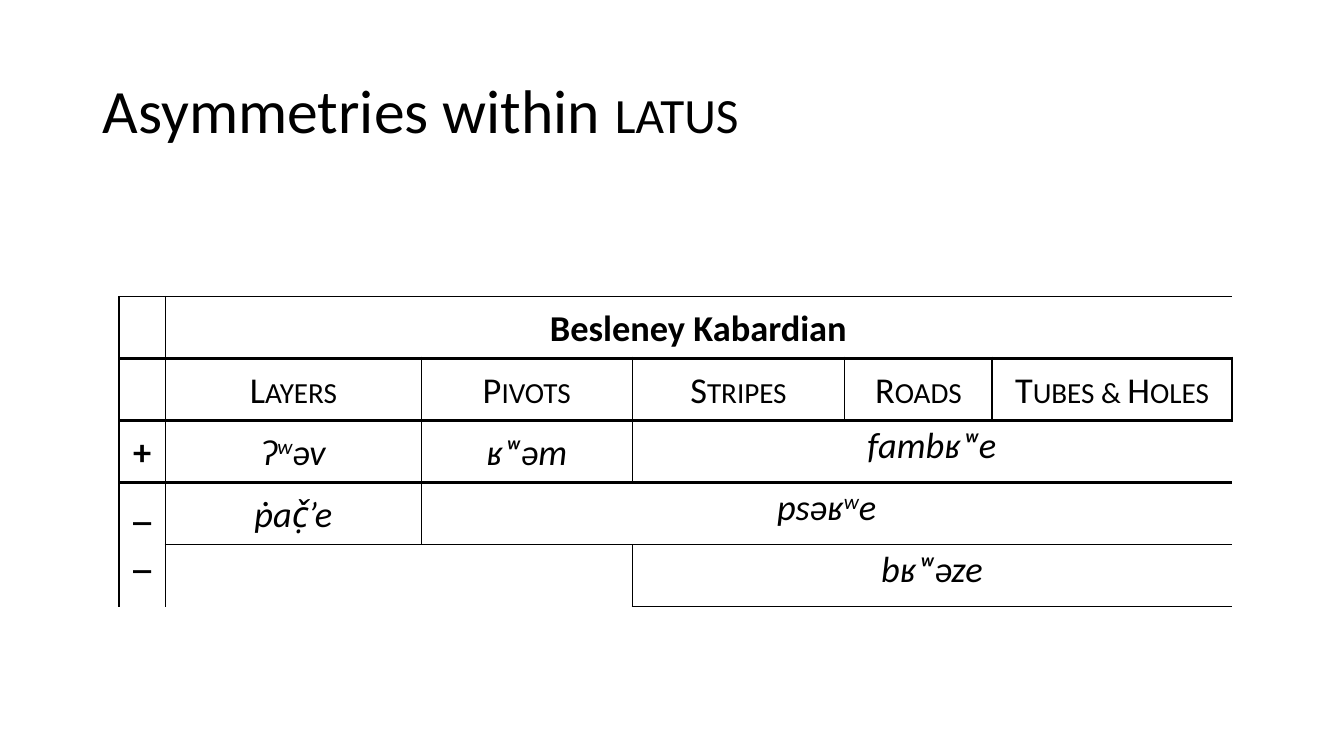
import pptx
import pptx.util
import pptx.dml.color
import pptx.enum.text
import pptx.oxml
import pptx.oxml.ns

Inches = pptx.util.Inches
Pt = pptx.util.Pt
ANCHOR = pptx.enum.text.MSO_ANCHOR
ALIGN = pptx.enum.text.PP_ALIGN

COLORS = {"ink": "000000"}
FONT = "Calibri"
COLUMN_WIDTHS = [0.46, 2.54, 2.09, 2.11, 1.46, 2.38]
TABLE_HEIGHT = 3.08
RULE_WIDTHS = [1, 3, 3, 3, 1, 1]  # horizontal rules, top to bottom
ITALIC = {"italic": True}
RAISED = {"italic": True, "baseline": 30000}
BOLD = {"bold": True}
SMALL = {"small_caps": True}

# row, column, row span, column span, anchor, runs
BLOCKS = [
    (0, 0, 1, 1, ANCHOR.MIDDLE, []),
    (0, 1, 1, 5, ANCHOR.MIDDLE, [("Besleney Kabardian", BOLD)]),
    (1, 0, 1, 1, ANCHOR.MIDDLE, []),
    (1, 1, 1, 1, ANCHOR.MIDDLE, [("Layers", SMALL)]),
    (1, 2, 1, 1, ANCHOR.MIDDLE, [("Pivots", SMALL)]),
    (1, 3, 1, 1, ANCHOR.MIDDLE, [("Stripes", SMALL)]),
    (1, 4, 1, 1, ANCHOR.MIDDLE, [("Roads", SMALL)]),
    (1, 5, 1, 1, ANCHOR.MIDDLE, [("Tubes & Holes", SMALL)]),
    (2, 0, 1, 1, ANCHOR.MIDDLE, [("+", BOLD)]),
    (2, 1, 1, 1, ANCHOR.MIDDLE, [("ʔ", ITALIC), ("w", RAISED), ("əv", ITALIC)]),
    (2, 2, 1, 1, ANCHOR.MIDDLE, [("ʁʷəm", ITALIC)]),
    (2, 3, 1, 3, ANCHOR.TOP, [("fambʁʷe", ITALIC)]),
    (3, 0, 2, 1, ANCHOR.TOP, [("__", BOLD)]),
    (3, 1, 1, 1, ANCHOR.MIDDLE, [("ṗač̣’e", ITALIC)]),
    (3, 2, 1, 4, ANCHOR.TOP, [("psəʁ", ITALIC), ("w", RAISED), ("e", ITALIC)]),
    (4, 3, 1, 3, ANCHOR.TOP, [("bʁʷəze", ITALIC)]),
]
# Unused corner: which sides of each cell carry a rule
OPEN_CELLS = {(4, 1): "LT", (4, 2): "TR"}


def add_run(paragraph, text, size, bold=False, italic=False,
            small_caps=False, baseline=0):
    run = paragraph.add_run()
    run.text = text
    font = run.font
    font.name, font.size = FONT, Pt(size)
    font.bold, font.italic = bold, italic
    font.color.rgb = pptx.dml.color.RGBColor.from_string(COLORS["ink"])
    properties = run._r.get_or_add_rPr()
    if small_caps:
        properties.set("cap", "small")
    if baseline:
        properties.set("baseline", str(baseline))


def add_title(slide):
    box = slide.shapes.add_textbox(Inches(0.92), Inches(0.4), Inches(11.5), Inches(1.45))
    frame = box.text_frame
    frame.word_wrap = True
    frame.vertical_anchor = ANCHOR.MIDDLE
    paragraph = frame.paragraphs[0]
    paragraph.line_spacing = 0.9
    add_run(paragraph, "Asymmetries within ", 44)
    add_run(paragraph, "latus", 44, **SMALL)


def set_borders(cell, row, sides):
    """Rule the named sides (letters of LRTB) and leave the others open."""
    widths = {"L": 1, "R": 1, "T": RULE_WIDTHS[row], "B": RULE_WIDTHS[row + 1]}
    properties = cell._tc.get_or_add_tcPr()
    for side, width in widths.items():
        if side in sides:
            paint = f'<a:solidFill><a:srgbClr val="{COLORS["ink"]}"/></a:solidFill>'
        else:
            paint = "<a:noFill/>"
        properties.append(pptx.oxml.parse_xml(
            f'<a:ln{side} {pptx.oxml.ns.nsdecls("a")} w="{Pt(width)}">{paint}</a:ln{side}>'))
    cell.fill.background()


def fill_cell(cell, anchor, runs):
    cell.vertical_anchor = anchor
    cell.margin_left = cell.margin_right = Inches(0.07)
    cell.margin_top = cell.margin_bottom = 0
    paragraph = cell.text_frame.paragraphs[0]
    paragraph.alignment = ALIGN.CENTER
    paragraph.line_spacing = 1.07
    paragraph.space_before = Pt(3)
    for text, style in runs:
        add_run(paragraph, text, 26, **style)


def add_block(table, row, column, height, width, anchor, runs):
    """Fill one cell, merged over its span, and rule its outline."""
    bottom, right = row + height - 1, column + width - 1
    cell = table.cell(row, column)
    if height * width > 1:
        cell.merge(table.cell(bottom, right))
    fill_cell(cell, anchor, runs)
    for r in range(row, bottom + 1):
        for c in range(column, right + 1):
            edges = {"L": c == column, "R": c == right, "T": r == row, "B": r == bottom}
            set_borders(table.cell(r, c), r, [side for side in edges if edges[side]])


def add_word_table(slide):
    row_count = len(RULE_WIDTHS) - 1
    table = slide.shapes.add_table(
        row_count, len(COLUMN_WIDTHS), Inches(1.18), Inches(2.94),
        Inches(sum(COLUMN_WIDTHS)), Inches(TABLE_HEIGHT)).table
    table.first_row = table.horz_banding = False
    for column, width in zip(table.columns, COLUMN_WIDTHS):
        column.width = Inches(width)
    for row in table.rows:
        row.height = Inches(TABLE_HEIGHT / row_count)
    for block in BLOCKS:
        add_block(table, *block)
    for (row, column), sides in OPEN_CELLS.items():
        set_borders(table.cell(row, column), row, sides)


def main():
    presentation = pptx.Presentation()
    presentation.slide_width = Inches(13.33)
    presentation.slide_height = Inches(7.5)
    slide = presentation.slides.add_slide(presentation.slide_layouts[6])
    add_title(slide)
    add_word_table(slide)
    presentation.save("out.pptx")


if __name__ == "__main__":
    main()
